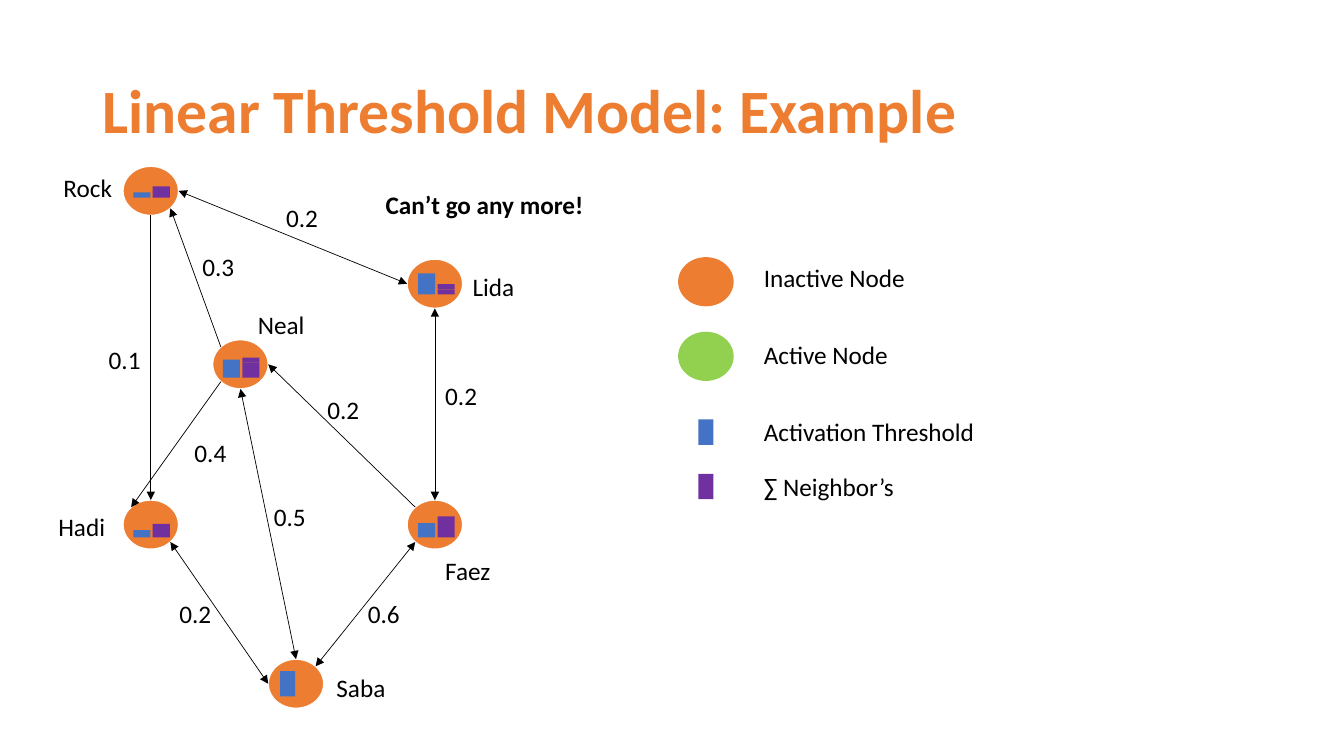
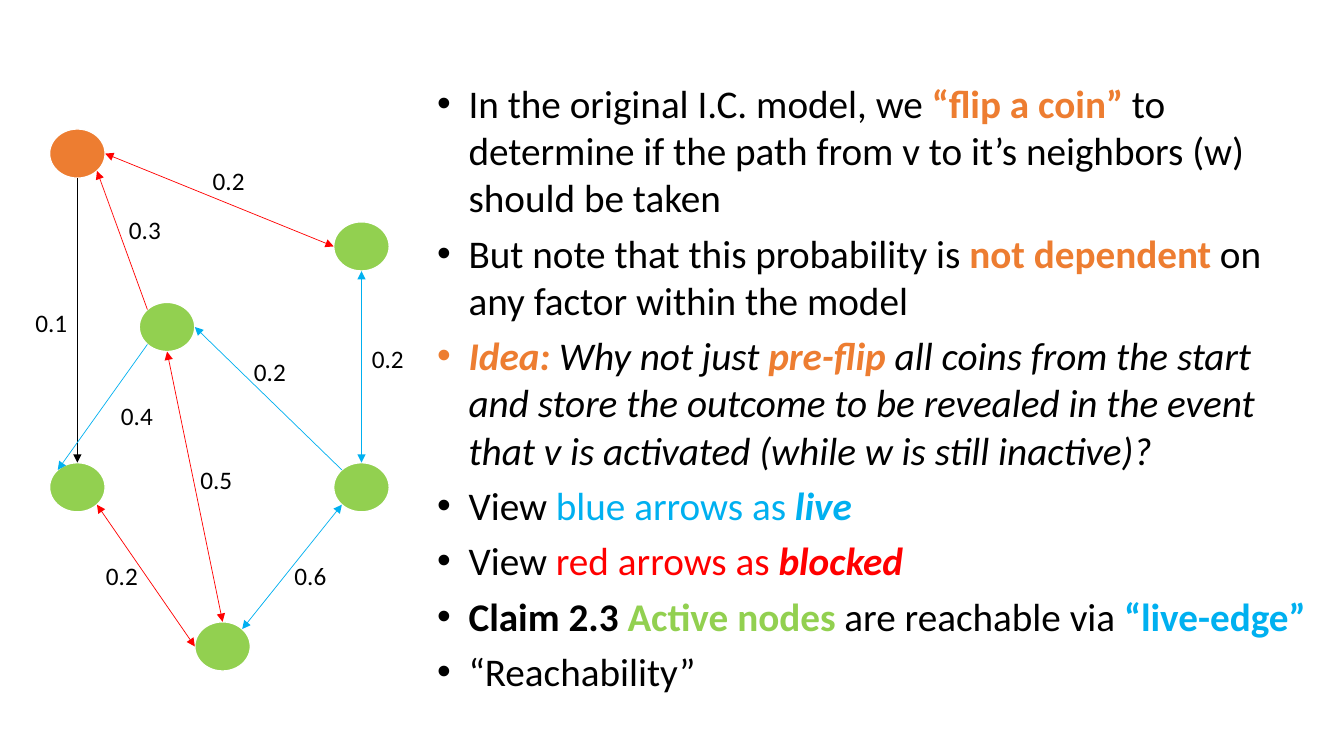
from math import sqrt

from lxml.etree import SubElement
from pptx import Presentation
from pptx.dml.color import RGBColor
from pptx.enum.shapes import MSO_CONNECTOR, MSO_SHAPE
from pptx.enum.text import MSO_ANCHOR, MSO_AUTO_SIZE
from pptx.oxml.ns import qn
from pptx.util import Cm, Pt

# Shared look
HUES = {
    "black": "000000", "white": "FFFFFF", "orange": "ED7D31", "green": "92D050",
    "blue": "4472C4", "purple": "7030A0", "live": "00B0F0", "block": "FF0000",
}
FONT = "Calibri"
FRAME = {"word_wrap": True, "auto_size": MSO_AUTO_SIZE.SHAPE_TO_FIT_TEXT}
TITLE = {"word_wrap": True, "vertical_anchor": MSO_ANCHOR.MIDDLE}
NODE = (1.4, 1.24)
KEY = (0.38, 0.64)
LINE = 1.02

# Graph: node corners, then edges (from, side, to, side, arrow ends, state)
NODES = {
    "Faez": (10.26, 12.6), "Hadi": (3.1, 12.6), "Saba": (6.76, 16.61),
    "Rock": (3.1, 4.19), "Neal": (5.36, 8.56), "Lida": (10.26, 6.53),
}
BOTH = ("head", "tail")
EDGES = [
    ("Saba", "NE", "Faez", "SW", BOTH, "live"),
    ("Saba", "N", "Neal", "S", BOTH, "block"),
    ("Neal", "E", "Faez", "NW", ("head",), "live"),
    ("Rock", "E", "Lida", "W", BOTH, "block"),
    ("Rock", "S", "Hadi", "N", ("tail",), "black"),
    ("Hadi", "SE", "Saba", "W", BOTH, "block"),
    ("Rock", "SE", "Neal", "NW", ("head",), "block"),
    ("Lida", "S", "Faez", "N", BOTH, "live"),
    ("Neal", "SW", "Hadi", "NW", ("tail",), "live"),
]
WEIGHTS = [
    ("0.6", 9.02, 14.94), ("0.2", 10.97, 9.47), ("0.2", 8, 9.8),
    ("0.5", 6.65, 12.52), ("0.2", 4.27, 14.94), ("0.1", 2.49, 8.56),
    ("0.3", 4.85, 6.22), ("0.2", 6.96, 4.98), ("0.4", 4.65, 10.9),
]
SHIFT = (-1.85, -0.94)

# Bars in a node: left, width, base, threshold, stacked neighbor sums
BARS = {
    "Saba": (0.3, 0.38, 0.94, 0.64, ()),
    "Faez": (0.28, 0.43, 0.94, 0.36, (0.53,)),
    "Hadi": (0.26, 0.43, 0.94, 0.18, (0.13, 0.21)),
    "Rock": (0.26, 0.43, 0.79, 0.13, (0.28,)),
    "Neal": (0.26, 0.43, 0.96, 0.46, (0.38, 0.13)),
    "Lida": (0.28, 0.43, 0.89, 0.53, (0.13, 0.13)),
}
STEP = 0.49
NAMES = [
    ("Saba", 8.23, 16.81), ("Faez", 10.97, 13.87), ("Hadi", 1.22, 12.75),
    ("Lida", 11.66, 6.71), ("Rock", 1.35, 4.22), ("Neal", 6.25, 7.67),
]

# Legend: text, text top, mark top, mark colour, mark size
LEGEND = [
    ("Inactive Node", 6.48, 6.48, "orange", NODE),
    ("Active Node", 8.43, 8.36, "green", NODE),
    ("Activation Threshold", 10.36, 10.57, "blue", KEY),
    ("∑ Neighbor’s", 11.76, 11.94, "purple", KEY),
]
MID = 17.79

# Bullets: runs of text, colour, bold/italic letters
POINTS = [
    [("In the original I.C. model, we ", "black", ""),
     ("“flip a coin” ", "orange", "b"),
     ("to determine if the path from v to it’s neighbors (w) should be taken",
      "black", "")],
    [("But note that this probability is ", "black", ""),
     ("not dependent", "orange", "b"),
     (" on any factor within the model", "black", "")],
    [("Idea:", "orange", "bi"), (" Why not just ", "black", "i"),
     ("pre-flip", "orange", "bi"),
     (" all coins from the start and store the outcome to be revealed in the "
      "event that v is activated (while w is still inactive)?", "black", "i")],
    [("View ", "black", ""), ("blue arrows as ", "live", ""),
     ("live", "live", "bi")],
    [("View ", "black", ""), ("red arrows as ", "block", ""),
     ("blocked", "block", "bi")],
    [("Claim 2.3 ", "black", "b"), ("Active nodes", "green", "b"),
     (" are reachable via ", "black", ""), ("“live-edge”", "live", "b")],
    [("“Reachability”", "black", "")],
]


def hue(name):
    return RGBColor.from_string(HUES[name])


def apply(item, form):
    for name, value in form.items():
        setattr(item, name, value)


def mark(slide, kind, x, y, size, fill, edge=None):
    shape = slide.shapes.add_shape(kind, *map(Cm, (x, y, *size)))
    shape.shadow.inherit = False
    shape.fill.solid()
    shape.fill.fore_color.rgb = hue(fill)
    if edge:
        shape.line.color.rgb = hue(edge)
        shape.line.width = Pt(1)
    else:
        shape.line.fill.background()


def write(para, runs, size):
    for text, tint, look in runs:
        run = para.add_run()
        run.text = text
        apply(run.font, {"name": FONT, "size": Pt(size),
                         "bold": "b" in look, "italic": "i" in look})
        run.font.color.rgb = hue(tint)


def frame(slide, x, y, w, h, form=FRAME):
    box = slide.shapes.add_textbox(*map(Cm, (x, y, w, h))).text_frame
    apply(box, form)
    return box


def label(slide, text, x, y, w, look=""):
    box = frame(slide, x, y, w, LINE)
    write(box.paragraphs[0], [(text, "black", look)], 18)


def site(node, side, dx, dy):
    """Point on a node's rim in a compass direction."""
    across = ("E" in side) - ("W" in side)
    down = ("S" in side) - ("N" in side)
    reach = sqrt(across ** 2 + down ** 2)
    x, y = NODES[node]
    w, h = NODE
    return (Cm(x + dx + w / 2 * (1 + across / reach)),
            Cm(y + dy + h / 2 * (1 + down / reach)))


def arrow(slide, start, end, ends, tint):
    link = slide.shapes.add_connector(MSO_CONNECTOR.STRAIGHT, *start, *end)
    link.line.color.rgb = hue(tint)
    link.line.width = Pt(0.5)
    props = link._element.spPr
    for tip in ends:
        SubElement(props.find(qn("a:ln")), qn(f"a:{tip}End"), type="triangle")
    SubElement(props, qn("a:effectLst"))


def graph(slide, fills, dx=0, dy=0, states=False):
    for name, (x, y) in NODES.items():
        mark(slide, MSO_SHAPE.OVAL, x + dx, y + dy, NODE,
             fills.get(name, fills["rest"]), "white")
    for one, out, two, into, ends, state in EDGES:
        arrow(slide, site(one, out, dx, dy), site(two, into, dx, dy), ends,
              state if states else "black")
    for text, x, y in WEIGHTS:
        label(slide, text, x + dx, y + dy, 1.63)


def bars(slide):
    for name, (left, wide, base, limit, sums) in BARS.items():
        x, y = NODES[name]
        x, foot = x + left, y + base
        mark(slide, MSO_SHAPE.RECTANGLE, x, foot - limit, (wide, limit), "blue")
        for high in sums:
            foot -= high
            mark(slide, MSO_SHAPE.RECTANGLE, x + STEP, foot, (wide, high), "purple")


def example(slide):
    box = frame(slide, 2.34, 1.02, 29.21, 3.68, TITLE)
    box.paragraphs[0].line_spacing = 0.9
    write(box.paragraphs[0],
          [("Linear Threshold Model: Example", "orange", "b")], 44)
    graph(slide, {"rest": "orange"})
    bars(slide)
    for name, x, y in NAMES:
        label(slide, name, x, y, 1.8)
    label(slide, "Can’t go any more!", 9.47, 4.65, 5.74, "b")
    for text, y, top, fill, size in LEGEND:
        kind = MSO_SHAPE.OVAL if size == NODE else MSO_SHAPE.RECTANGLE
        mark(slide, kind, MID - size[0] / 2, top, size, fill)
        label(slide, text, 19, y, 5.92)


def coins(slide):
    graph(slide, {"rest": "green", "Rock": "orange"}, *SHIFT, states=True)
    box = frame(slide, 10.77, 1.88, 22.68, 15.9)
    for i, runs in enumerate(POINTS):
        para = box.add_paragraph() if i else box.paragraphs[0]
        para.space_after = Pt(6)
        props = para._p.get_or_add_pPr()
        props.set("marL", str(Cm(0.79)))
        props.set("indent", str(-Cm(0.79)))
        SubElement(props, qn("a:buFont"), typeface="Arial")
        SubElement(props, qn("a:buChar"), char="•")
        write(para, runs, 28)


def main():
    deck = Presentation()
    apply(deck, {"slide_width": Cm(33.87), "slide_height": Cm(19.05)})
    for build in (example, coins):
        build(deck.slides.add_slide(deck.slide_layouts[6]))
    deck.save("out.pptx")


if __name__ == "__main__":
    main()
